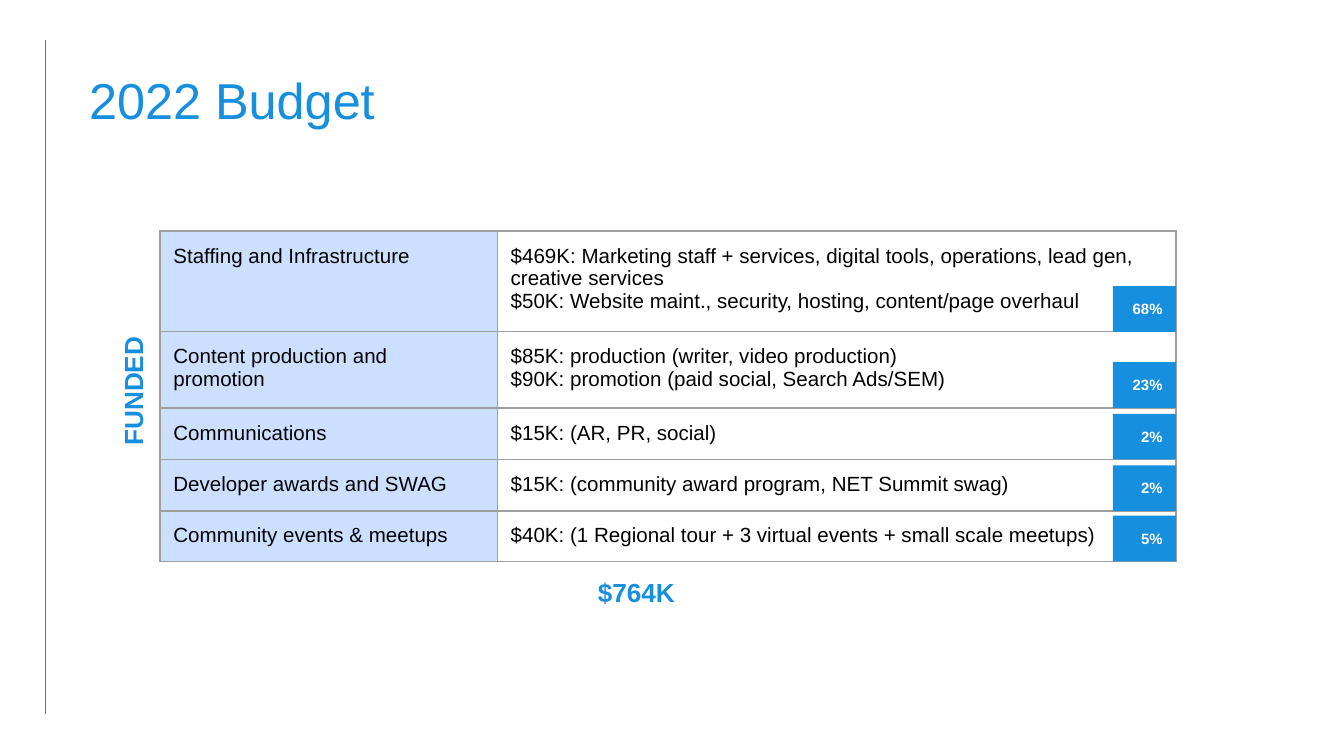
from lxml.etree import SubElement as Sub
from pptx import Presentation
from pptx.dml.color import RGBColor
from pptx.enum.shapes import MSO_CONNECTOR as Conn, MSO_SHAPE as Form
from pptx.enum.text import MSO_ANCHOR as Anchor, MSO_AUTO_SIZE as Fit, PP_ALIGN as Align
from pptx.oxml.ns import qn
from pptx.util import Pt

BLUE, PALE, GREY, BLACK, WHITE = "168FDF", "CCDFFF", "9E9E9E", "000000", "FFFFFF"
TITLE = "2022 Budget"
ROWS = [
    ("Staffing and Infrastructure",
     ["$469K: Marketing staff + services, digital tools, operations, lead gen, creative services",
      "$50K: Website maint., security, hosting, content/page overhaul"], "68%", 54),
    ("Content production and promotion",
     ["$85K: production (writer, video production)",
      "$90K: promotion (paid social, Search Ads/SEM)"], "23%", 40.8),
    ("Communications", ["$15K: (AR, PR, social)"], "2%", 27.6),
    ("Developer awards and SWAG",
     ["$15K: (community award program, NET Summit swag)"], "2%", 27.6),
    ("Community events & meetups",
     ["$40K: (1 Regional tour + 3 virtual events + small scale meetups)"], "5%", 27),
]
LABELS = [("FUNDED", (-10.8, 193.7, 164.2, 31.7), 270),
          ("$764K", (306.7, 301.7, 68.4, 31.7), 0)]
LEFT, TOP = 85.7, 123.8
COLS = (180.7, 363.6)
TAG_W, TAG_H = 33.8, 24.5
PAD = 7.2

BODY = dict(size=Pt(11), bold=False)
HEAD = dict(size=Pt(27), bold=False)
NOTE = dict(size=Pt(14), bold=True)
TAG = dict(size=Pt(8), bold=True)


def tint(code):
    return RGBColor.from_string(code)


def pts(*nums):
    return [Pt(n) for n in nums]


def inset(item, pad):
    for side in ("left", "top", "right", "bottom"):
        setattr(item, "margin_" + side, Pt(pad))


def write(frame, lines, look, color, align=Align.LEFT):
    frame.text = "\n".join(lines)
    for para in frame.paragraphs:
        para.alignment = align
        font = para.runs[0].font
        font.name = "Arial"
        font.color.rgb = tint(color)
        for key, value in look.items():
            setattr(font, key, value)


def set_box(frame, pad, anchor):
    inset(frame, pad)
    frame.word_wrap = True
    frame.auto_size = Fit.NONE
    frame.vertical_anchor = anchor


def edge(cell):
    props = cell._tc.get_or_add_tcPr()
    for side in ("lnL", "lnR", "lnT", "lnB"):
        line = Sub(props, qn("a:" + side), w=str(Pt(0.75)))
        fill = Sub(line, qn("a:solidFill"))
        Sub(fill, qn("a:srgbClr"), val=GREY)


deck = Presentation()
deck.slide_width, deck.slide_height = pts(720, 405)
slide = deck.slides.add_slide(deck.slide_layouts[5])
shapes = slide.shapes

rule = shapes.add_connector(Conn.STRAIGHT, *pts(24.5, 21.6, 24.5, 382.3))
rule.line.color.rgb = tint(BLUE)
rule.line.width = Pt(0.75)
Sub(rule._element.spPr, qn("a:effectLst"))

title = shapes.title
title.left, title.top, title.width, title.height = pts(43.2, 33.1, 645.8, 43.9)
set_box(title.text_frame, 4.5, Anchor.MIDDLE)
write(title.text_frame, [TITLE], HEAD, BLUE)
title.text_frame.paragraphs[0].line_spacing = 0.9

high = sum(row[3] for row in ROWS)
grid = shapes.add_table(len(ROWS), 2, *pts(LEFT, TOP, sum(COLS), high)).table
grid.first_row = grid.horz_banding = False
for col, wide in zip(grid.columns, COLS):
    col.width = Pt(wide)

base = TOP
for i, (name, costs, share, tall) in enumerate(ROWS):
    grid.rows[i].height = Pt(tall)
    for j, lines in enumerate(([name], costs)):
        cell = grid.cell(i, j)
        inset(cell, PAD)
        edge(cell)
        if j == 0:
            cell.fill.solid()
            cell.fill.fore_color.rgb = tint(PALE)
        else:
            cell.fill.background()
        write(cell.text_frame, lines, BODY, BLACK)

    base += tall
    place = pts(LEFT + sum(COLS) - TAG_W, base - TAG_H, TAG_W, TAG_H)
    tag = shapes.add_shape(Form.RECTANGLE, *place)
    tag.shadow.inherit = False
    tag.fill.solid()
    tag.fill.fore_color.rgb = tint(BLUE)
    tag.line.fill.background()
    set_box(tag.text_frame, PAD, Anchor.TOP)
    write(tag.text_frame, [share], TAG, WHITE, Align.RIGHT)

for text, place, turn in LABELS:
    label = shapes.add_textbox(*pts(*place))
    label.rotation = turn
    set_box(label.text_frame, PAD, Anchor.TOP)
    write(label.text_frame, [text], NOTE, BLUE, Align.CENTER)

deck.save("out.pptx")
